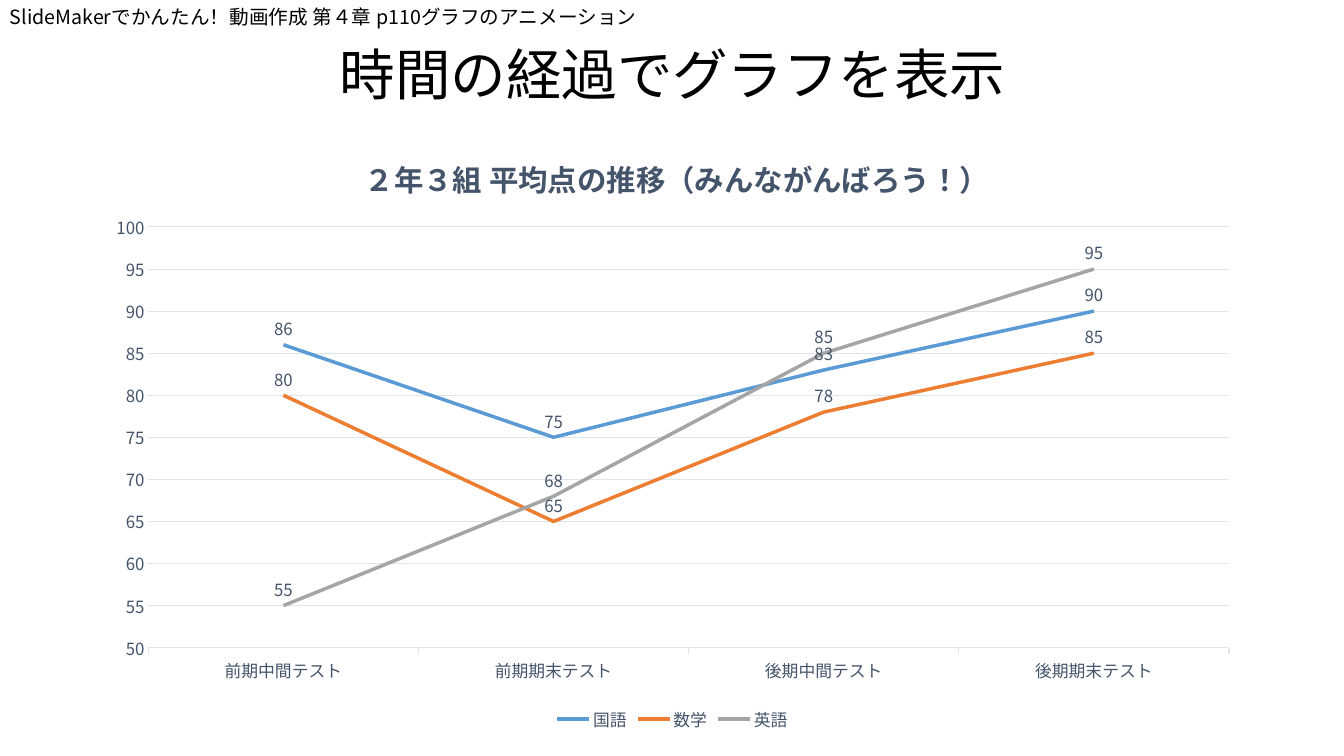
from lxml import etree
from pptx import Presentation
from pptx.chart.data import CategoryChartData
from pptx.dml.color import RGBColor
from pptx.enum.chart import XL_CHART_TYPE as ChartType, XL_LABEL_POSITION as LabelPos
from pptx.enum.chart import XL_LEGEND_POSITION as LegendPos, XL_MARKER_STYLE as Marker
from pptx.enum.chart import XL_TICK_MARK as Tick
from pptx.enum.text import MSO_ANCHOR as Anchor, PP_ALIGN as Align
from pptx.oxml.ns import qn
from pptx.util import Inches, Pt

FACE = "Noto Sans CJK JP"
BLACK, SLATE, PALE = "000000", "44546A", "E0E5EB"
EXAMS = ["前期中間テスト", "前期期末テスト", "後期中間テスト", "後期期末テスト"]
SUBJECTS = {
    "国語": ("5B9BD5", [86, 75, 83, 90]),
    "数学": ("ED7D31", [80, 65, 78, 85]),
    "英語": ("A5A5A5", [55, 68, 85, 95]),
}


def rgb(code):
    return RGBColor.from_string(code)


def style_font(font, size, color, bold=False):
    for key, value in {"name": FACE, "size": Pt(size), "bold": bold}.items():
        setattr(font, key, value)
    font.color.rgb = rgb(color)


def style_line(line, color, width):
    line.color.rgb = rgb(color)
    line.width = Pt(width)


def add_east_asian_face(root):
    for latin in list(root.iter(qn("a:latin"))):
        east_asian = etree.Element(qn("a:ea"), typeface=FACE)
        latin.addnext(east_asian)


def fix_layout(parent, index, **shares):
    for old in parent.findall(qn("c:layout")):
        parent.remove(old)
    layout = etree.Element(qn("c:layout"))
    manual = etree.SubElement(layout, qn("c:manualLayout"))
    for tag, value in shares.items():
        etree.SubElement(manual, qn(f"c:{tag}"), val=str(value))
    parent.insert(index, layout)


def add_text(slide, box, text, size, align=Align.LEFT, spacing=None):
    shape = slide.shapes.add_textbox(*map(Inches, box))
    frame = shape.text_frame
    frame.word_wrap = True
    frame.vertical_anchor = Anchor.MIDDLE
    paragraph = frame.paragraphs[0]
    paragraph.alignment = align
    paragraph.line_spacing = spacing
    run = paragraph.add_run()
    run.text = text
    style_font(run.font, size, BLACK)
    add_east_asian_face(shape.element)


def style_axes(chart):
    exams, scores = chart.category_axis, chart.value_axis
    for axis in (exams, scores):
        style_font(axis.tick_labels.font, 12, SLATE)
        axis.minor_tick_mark = Tick.NONE
    exams.major_tick_mark = Tick.OUTSIDE
    style_line(exams.format.line, PALE, 0.75)
    limits = {"minimum_scale": 50, "maximum_scale": 100, "major_unit": 5,
              "major_tick_mark": Tick.NONE, "has_major_gridlines": True}
    for key, value in limits.items():
        setattr(scores, key, value)
    scores.format.line.fill.background()
    style_line(scores.major_gridlines.format.line, PALE, 0.75)


def style_subject(series, color):
    series.smooth = False
    series.marker.style = Marker.NONE
    style_line(series.format.line, color, 2.5)
    labels = series.data_labels
    labels.show_value = True
    labels.position = LabelPos.ABOVE
    style_font(labels.font, 12, SLATE)


def add_score_chart(slide, box):
    data = CategoryChartData()
    data.categories = EXAMS
    for subject, (_, scores) in SUBJECTS.items():
        data.add_series(subject, scores)
    chart = slide.shapes.add_chart(ChartType.LINE, *map(Inches, box), data).chart
    style_font(chart.font, 10, BLACK)
    chart.plots[0].vary_by_categories = False
    style_axes(chart)
    for series, (color, _) in zip(chart.plots[0].series, SUBJECTS.values()):
        style_subject(series, color)

    chart.has_legend = True
    chart.legend.position = LegendPos.BOTTOM
    chart.legend.include_in_layout = False
    style_font(chart.legend.font, 12, SLATE)

    chart.has_title = True
    heading = chart.chart_title.text_frame.paragraphs[0].add_run()
    heading.text = "２年３組 平均点の推移（みんながんばろう！）"
    style_font(heading.font, 21, SLATE, bold=True)
    fix_layout(chart.chart_title.element, 1, xMode="edge", yMode="edge", x=0.23, y=0.04)
    fix_layout(chart.element.find(".//" + qn("c:plotArea")), 0, layoutTarget="inner",
               xMode="edge", yMode="edge", x=0.048, y=0.167, w=0.932, h=0.689)
    add_east_asian_face(chart.element)


def main():
    deck = Presentation()
    deck.slide_width, deck.slide_height = Inches(13.33), Inches(7.5)
    slide = deck.slides.add_slide(deck.slide_layouts[6])
    margin, content_width = 0.92, 11.5
    add_text(slide, (margin, 0.4, content_width, 0.74), "時間の経過でグラフを表示",
             39.6, Align.CENTER, 0.9)
    add_score_chart(slide, (margin, 1.24, content_width, 6.06))
    add_text(slide, (0, 0, 6.67, 0.34),
             "SlideMakerでかんたん！動画作成 第４章 p110グラフのアニメーション", 14)
    deck.save("out.pptx")


if __name__ == "__main__":
    main()
